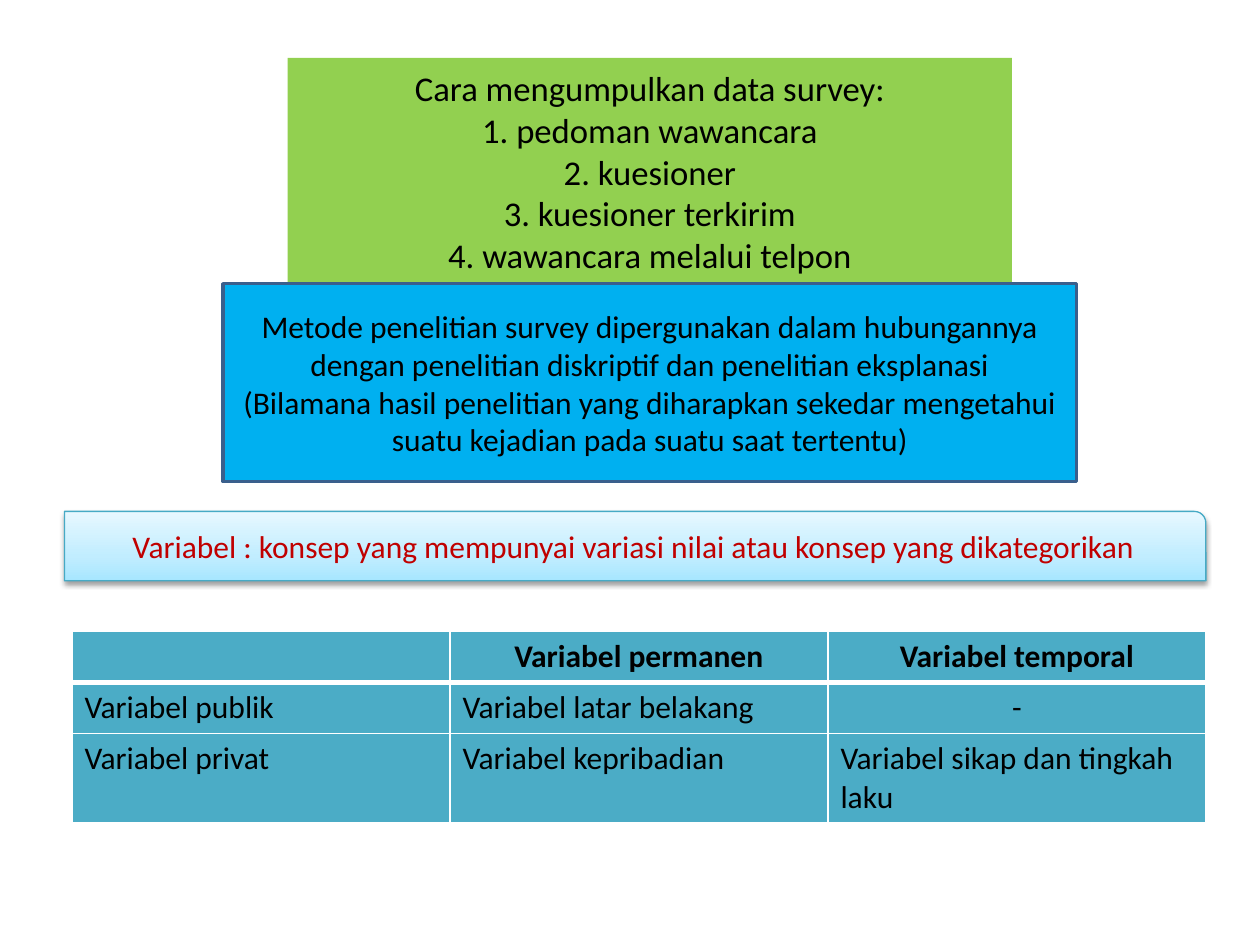
from pptx import Presentation
from pptx.dml.color import RGBColor
from pptx.enum.shapes import MSO_SHAPE
from pptx.enum.text import MSO_ANCHOR, PP_ALIGN
from pptx.oxml import parse_xml
from pptx.oxml.ns import nsdecls
from pptx.util import Cm, Pt

BLACK = RGBColor(0x00, 0x00, 0x00)
WHITE = RGBColor(0xFF, 0xFF, 0xFF)
GREEN = RGBColor(0x92, 0xD0, 0x50)
BLUE = RGBColor(0x00, 0xB0, 0xF0)
NAVY = RGBColor(0x3A, 0x5F, 0x8C)
TEAL = RGBColor(0x4B, 0xAC, 0xC6)
TEAL_LINE = RGBColor(0x46, 0xAA, 0xC5)
RED = RGBColor(0xC0, 0x00, 0x00)
ICE_STOPS = [
    (0, RGBColor(0xA7, 0xE6, 0xFF)),
    (35, RGBColor(0xC1, 0xED, 0xFF)),
    (100, RGBColor(0xE7, 0xF8, 0xFF)),
]


class SlideBuilder:
    text_format = {"name": "Calibri", "size": Pt(18), "bold": False}

    def __init__(self, deck):
        self.page = deck.slides.add_slide(deck.slide_layouts[6])

    def add_text(self, frame, lines, align=PP_ALIGN.CENTER, color=BLACK, **changes):
        frame.word_wrap = True
        for index, line in enumerate(lines):
            para = frame.paragraphs[0] if index == 0 else frame.add_paragraph()
            para.alignment = align
            span = para.add_run()
            span.text = line
            for name, value in {**self.text_format, **changes}.items():
                setattr(span.font, name, value)
            span.font.color.rgb = color

    def box(self, place, lines, fill=None, line=None, width=1,
            kind=MSO_SHAPE.RECTANGLE, **changes):
        box = self.page.shapes.add_shape(kind, *map(Cm, place))
        box.shadow.inherit = False
        if fill is not None:
            box.fill.solid()
            box.fill.fore_color.rgb = fill
        if line is None:
            box.line.fill.background()
        else:
            box.line.color.rgb = line
            box.line.width = Pt(width)
        box.text_frame.vertical_anchor = MSO_ANCHOR.MIDDLE
        self.add_text(box.text_frame, lines, **changes)
        return box

    def banner(self, place, lines, stops, **changes):
        box = self.box(place, lines, kind=MSO_SHAPE.ROUND_1_RECTANGLE, **changes)
        marks = "".join(
            f'<a:gs pos="{position * 1000}"><a:srgbClr val="{color}"/></a:gs>'
            for position, color in stops)
        properties = box.element.spPr
        properties.insert(2, parse_xml(
            f'<a:gradFill {nsdecls("a")} rotWithShape="1"><a:gsLst>{marks}</a:gsLst>'
            '<a:lin ang="16200000" scaled="0"/></a:gradFill>'))
        effects = properties.find("{*}effectLst")
        effects.append(parse_xml(
            f'<a:outerShdw {nsdecls("a")} blurRad="{Pt(3.1)}" dist="{Pt(1.6)}"'
            ' dir="5400000" rotWithShape="0"><a:srgbClr val="000000">'
            '<a:alpha val="38000"/></a:srgbClr></a:outerShdw>'))

    def borders(self, cell, widths):
        properties = cell._tc.get_or_add_tcPr()
        for index, (side, width) in enumerate(widths.items()):
            properties.insert(index, parse_xml(
                f'<a:ln{side} {nsdecls("a")} w="{Pt(width)}"><a:solidFill>'
                f'<a:srgbClr val="{WHITE}"/></a:solidFill></a:ln{side}>'))

    def table(self, place, rows, heights, fill):
        table = self.page.shapes.add_table(
            len(rows), len(rows[0]), *map(Cm, place)).table
        for row_index, (row, height) in enumerate(zip(rows, heights)):
            table.rows[row_index].height = Cm(height)
            header = row_index == 0
            for column_index, text in enumerate(row):
                cell = table.cell(row_index, column_index)
                cell.fill.solid()
                cell.fill.fore_color.rgb = fill
                self.borders(cell, {"L": 1, "R": 1, "T": 3 if row_index == 1 else 1,
                                    "B": 3 if header else 1})
                if text:
                    centred = header or text == "-"
                    self.add_text(cell.text_frame, [text], bold=header,
                                  align=PP_ALIGN.CENTER if centred else PP_ALIGN.LEFT)


def main():
    deck = Presentation()
    deck.slide_width, deck.slide_height = Cm(25.4), Cm(19.05)
    builder = SlideBuilder(deck)
    builder.box(
        (5.8, 1.17, 14.6, 4.57),
        ["Cara mengumpulkan data survey:", "1. pedoman wawancara", "2. kuesioner",
         "3. kuesioner terkirim", "4. wawancara melalui telpon"],
        fill=GREEN, size=Pt(19.8))
    builder.table(
        (1.45, 12.73, 22.86, 3.84),
        [["", "Variabel permanen", "Variabel temporal"],
         ["Variabel publik", "Variabel latar belakang", "-"],
         ["Variabel privat", "Variabel kepribadian", "Variabel sikap dan tingkah laku"]],
        heights=[1.03, 1.03, 1.78], fill=TEAL)
    builder.box(
        (4.5, 5.72, 17.2, 3.99),
        ["Metode penelitian survey dipergunakan dalam hubungannya dengan penelitian "
         "diskriptif dan penelitian eksplanasi",
         "(Bilamana hasil penelitian yang diharapkan sekedar mengetahui suatu "
         "kejadian pada suatu saat tertentu)"],
        fill=BLUE, line=NAVY, width=2)
    builder.banner(
        (1.3, 10.31, 23.01, 1.4),
        ["Variabel : konsep yang mempunyai variasi nilai atau konsep yang dikategorikan"],
        ICE_STOPS, line=TEAL_LINE, width=0.75, color=RED)
    deck.save("out.pptx")


if __name__ == "__main__":
    main()
